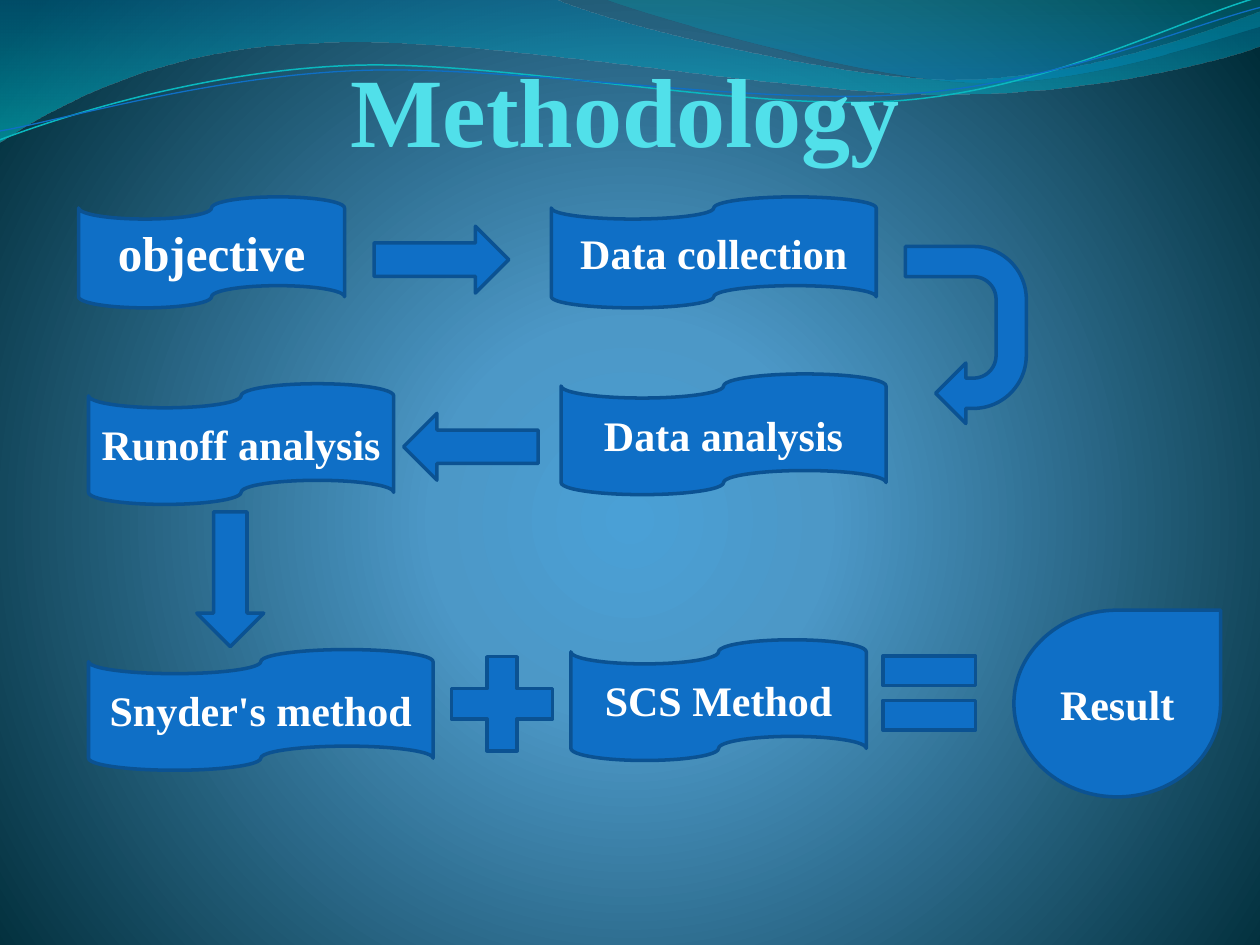
from dataclasses import dataclass

from lxml import etree
from pptx import Presentation
from pptx.dml.color import RGBColor
from pptx.enum import shapes, text
from pptx.oxml import ns
from pptx import util as u

Pt = u.Pt
Kind = shapes.MSO_SHAPE
UNITS_PER_POINT = 100


@dataclass(frozen=True)
class Theme:
    font: str = "Times New Roman"
    fill: str = "0F6FC6"
    outline: str = "0B5292"
    label: str = "FFFFFF"
    title: str = "51E0EA"
    teal_line: str = "0AB8BF"
    # gradient stops: position %, colour, opacity %
    backdrop: tuple = ((0, "4AA0D6", 100), (25, "4C98C7", 100), (100, "002C38", 100))
    wide_wave: tuple = ((0, "0074A1", 45), (100, "00C6CF", 55))
    right_wave: tuple = ((0, "00A1A9", 30), (80, "008BBF", 45))
    title_size: float = 56
    lead_size: float = 28
    label_size: float = 24
    outline_width: float = 2


def gradient(stops, radial=False):
    """Return a gradFill element, running downwards unless radial."""
    grad = etree.Element(ns.qn("a:gradFill"), rotWithShape="1")
    stop_list = etree.SubElement(grad, ns.qn("a:gsLst"))
    for position, colour, opacity in stops:
        stop = etree.SubElement(stop_list, ns.qn("a:gs"), pos=str(position * 1000))
        rgb = etree.SubElement(stop, ns.qn("a:srgbClr"), val=colour)
        if opacity < 100:
            etree.SubElement(rgb, ns.qn("a:alpha"), val=str(opacity * 1000))
    if radial:
        circle = etree.SubElement(grad, ns.qn("a:path"))
        circle.set("path", "circle")
        etree.SubElement(circle, ns.qn("a:fillToRect"),
                         l="10000", t="110000", r="10000", b="100000")
    else:
        etree.SubElement(grad, ns.qn("a:lin"), ang="5400000", scaled="0")
    return grad


def bend(shape, segments):
    """Turn each run of three straight steps into one cubic curve."""
    steps = iter(list(shape.element.iter(ns.qn("a:lnTo"))))
    for segment in segments:
        first, *others = [next(steps) for _ in segment]
        if others:
            curve = etree.Element(ns.qn("a:cubicBezTo"))
            first.addprevious(curve)
            for step in (first, *others):
                curve.append(step[0])
                step.getparent().remove(step)


def write(frame, words, *, font, size, colour, bold=True,
          anchor=text.MSO_ANCHOR.MIDDLE, align=text.PP_ALIGN.CENTER):
    frame.word_wrap = True
    frame.vertical_anchor = anchor
    para = frame.paragraphs[0]
    para.alignment = align
    span = para.add_run()
    span.text = words
    span.font.name = font
    span.font.size = Pt(size)
    span.font.bold = bold
    span.font.color.rgb = RGBColor.from_string(colour)


class SlideBuilder:
    def __init__(self, page, theme):
        self.page = page
        self.theme = theme

    def backdrop(self):
        self.page.background.fill.solid()
        solid = self.page.element.find(".//" + ns.qn("p:bgPr"))[0]
        solid.getparent().replace(solid, gradient(self.theme.backdrop, radial=True))

    def outline(self, shape, colour, width):
        shape.line.color.rgb = RGBColor.from_string(colour)
        shape.line.width = Pt(width)

    def freeform(self, start, segments, closed):
        """Draw segments of one point (straight) or three points (cubic)."""
        points = [(round(x * UNITS_PER_POINT), round(y * UNITS_PER_POINT))
                  for x, y in [start] + sum(segments, [])]
        pen = self.page.shapes.build_freeform(*points[0], scale=Pt(1) / UNITS_PER_POINT)
        pen.add_line_segments(points[1:], close=closed)
        shape = pen.convert_to_shape()
        bend(shape, segments)
        shape.shadow.inherit = False
        shape.fill.background()
        return shape

    def wave(self, start, *segments, stops):
        shape = self.freeform(start, list(segments), closed=True)
        shape.line.fill.background()
        blank = shape.element.spPr.find(ns.qn("a:noFill"))
        blank.getparent().replace(blank, gradient(stops))

    def curve(self, start, *segments, colour, width, rotation):
        shape = self.freeform(start, list(segments), closed=False)
        shape.rotation = rotation
        self.outline(shape, colour, width)

    def title(self, words, left, top, width, height):
        box = self.page.shapes.add_textbox(Pt(left), Pt(top), Pt(width), Pt(height))
        frame = box.text_frame
        frame.margin_left = frame.margin_top = frame.margin_bottom = 0
        frame.margin_right = Pt(1.44)
        write(frame, words, font=self.theme.font, size=self.theme.title_size,
              colour=self.theme.title, anchor=text.MSO_ANCHOR.BOTTOM)

    def symbol(self, kind, left, top, width, height, rotation=0):
        shape = self.page.shapes.add_shape(kind, Pt(left), Pt(top), Pt(width), Pt(height))
        shape.rotation = rotation
        shape.shadow.inherit = False
        shape.fill.solid()
        shape.fill.fore_color.rgb = RGBColor.from_string(self.theme.fill)
        self.outline(shape, self.theme.outline, self.theme.outline_width)
        return shape

    def step(self, words, left, top, width, height, size=None,
             kind=Kind.FLOWCHART_PUNCHED_TAPE):
        shape = self.symbol(kind, left, top, width, height)
        write(shape.text_frame, words, font=self.theme.font,
              size=size or self.theme.label_size, colour=self.theme.label)


def draw_waves(slide):
    theme, tilt = slide.theme, 357.3
    slide.wave(
        (0, 0), [(316.8, -0.7)],
        [(342.7, 12.2), (478.1, 45.4), (545.8, 45.4)],
        [(614.2, 45.4), (689.8, 18.7), (720, 6.5)], [(720.7, 25.9)],
        [(707.8, 31.7), (626.4, 54.7), (537.1, 54)],
        [(447.8, 54), (275, 20.2), (185, 24.5)],
        [(92.9, 25.9), (33.1, 59.8), (-0.7, 81.4)], [(0, 0)],
        stops=theme.wide_wave)
    slide.wave(
        (344.9, -0.7),
        [(366.5, 7.9), (491, 44.6), (553.7, 46.8)],
        [(616.3, 49.7), (691.9, 23), (720, 15.1)], [(720, 0)], [(344.9, -0.7)],
        stops=theme.right_wave)
    slide.curve(
        (-1.4, 62.9),
        [(33.7, 51.6), (114, 29.4), (199.8, 29.9)],
        [(284.8, 30.3), (425.8, 67.2), (512.4, 64.8)],
        [(599, 62.4), (676.4, 25.7), (720.2, 15.6)],
        colour=theme.teal_line, width=0.85, rotation=tilt)
    slide.curve(
        (-1.2, 57.9),
        [(33, 53.7), (118.3, 32.5), (204, 33)],
        [(290.5, 33.5), (428.9, 63.8), (515.5, 61.3)],
        [(601.4, 59.7), (678.5, 30.1), (721.4, 21.3)],
        colour=theme.fill, width=0.75, rotation=tilt)


def draw_flow(slide):
    arrow_length, arrow_width = 77, 38.2
    tape_height = 69
    top_row, top_height = 112.5, 63.4

    slide.step("objective", 44.9, top_row, 152, top_height, size=slide.theme.lead_size)
    slide.step("Data collection", 315, top_row, 185.7, top_height)
    slide.symbol(Kind.RIGHT_ARROW, 213.8, 129.3, arrow_length, arrow_width)
    slide.symbol(Kind.U_TURN_ARROW, 501.3, 156.9, 101.2, 69.1, rotation=90)

    slide.step("Data analysis", 320.6, 213.7, 185.7, tape_height)
    slide.symbol(Kind.LEFT_ARROW, 230.6, 236.2, arrow_length, arrow_width)
    slide.step("Runoff analysis", 50.6, 219.3, 174.4, tape_height)
    slide.symbol(Kind.DOWN_ARROW, 112.5, 292.5, arrow_width, arrow_length)

    slide.step("Snyder's method", 50.6, 371.2, 196.9, tape_height)
    slide.symbol(Kind.MATH_PLUS, 247.5, 365.6, 78.8, 73.2)
    slide.step("SCS Method", 326.2, 365.6, 168.8, tape_height)
    slide.symbol(Kind.MATH_EQUAL, 495, 360, 72, 72)
    slide.step("Result", 579.4, 348.7, 118.1, 106.7, kind=Kind.TEAR)


def main():
    deck = Presentation()
    deck.slide_width, deck.slide_height = Pt(720), Pt(540)
    slide = SlideBuilder(deck.slides.add_slide(deck.slide_layouts[6]), Theme())
    slide.backdrop()
    draw_waves(slide)
    slide.title(" Methodology", 45, 28, 612, 67.5)
    draw_flow(slide)
    deck.save("out.pptx")


if __name__ == "__main__":
    main()
